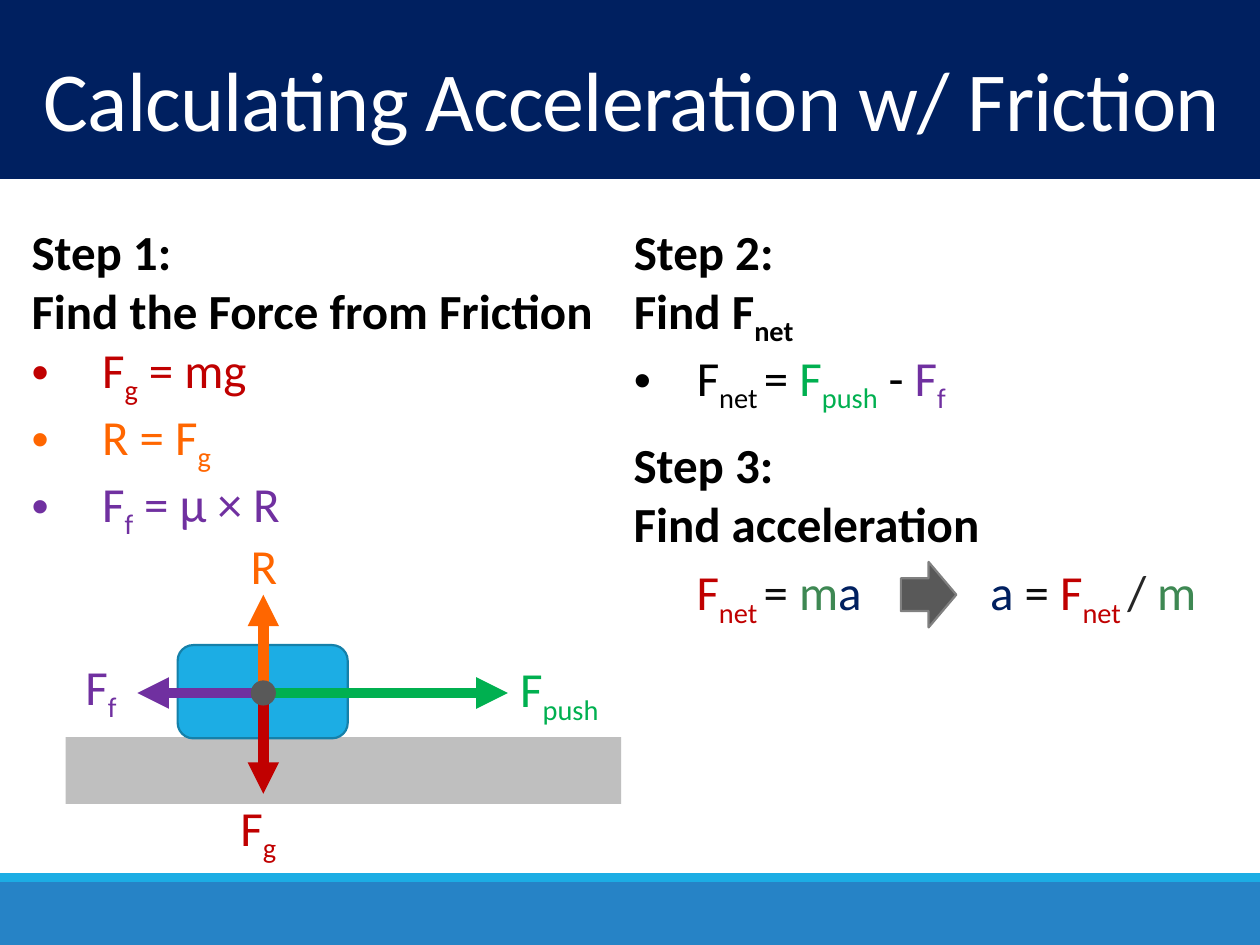
"""Build a slide on calculating acceleration with friction."""
from dataclasses import dataclass

from lxml.etree import SubElement
from pptx import Presentation
from pptx.dml.color import RGBColor
from pptx.enum.shapes import MSO_CONNECTOR as CONN, MSO_SHAPE as SHP
from pptx.enum.text import MSO_ANCHOR, MSO_AUTO_SIZE as FIT, PP_ALIGN
from pptx.oxml.ns import qn
from pptx.util import Inches, Pt


@dataclass(frozen=True)
class Theme:
    font: str = "Calibri"
    title: int = 48
    body: int = 28
    black: str = "000000"
    white: str = "FFFFFF"
    ink: str = "0D0D0D"
    slash: str = "262626"
    navy: str = "002060"
    red: str = "C00000"
    orange: str = "FF6600"
    purple: str = "7030A0"
    green: str = "00B050"
    mass: str = "3E8853"
    sky: str = "1CADE4"
    sky_edge: str = "1580A9"
    blue: str = "2683C6"
    floor: str = "BFBFBF"
    dark: str = "595959"
    grey: str = "808080"


T = Theme()
W, H = 10, 7.5
LEFT, RIGHT, COL_W, TOP = 0.15, 4.93, 4.89, 1.71
CX, CY = 2.09, 5.5


def force(sub, color):
    return [("F", color, False), (sub, color, True)]


def plain(text, color=T.black):
    return [(text, color, False)]


TITLE = "Calculating Acceleration w/ Friction"
STEP_1 = [
    ("head", plain("Step 1:")),
    ("head", plain("Find the Force from Friction")),
    ("item", force("g", T.red) + plain(" = mg", T.red)),
    ("item", plain("R = F", T.orange) + [("g", T.orange, True)]),
    ("item", force("f", T.purple) + plain(" = μ × R", T.purple)),
]
STEP_2 = [
    ("head", plain("Step 2:")),
    ("head", plain("Find F") + [("net", T.black, True)]),
    ("item", force("net ", T.black) + plain("= ") + force("push", T.green)
     + plain(" - ") + force("f", T.purple)),
]
STEP_3 = [("head", plain("Step 3:")), ("head", plain("Find acceleration"))]
LABELS = [
    (5.43, 4.41, 1.6, force("net ", T.red) + plain("= ", T.ink)
     + plain("m", T.mass) + plain("a", T.navy)),
    (7.76, 4.41, 1.89, plain("a ", T.navy) + plain("= ", T.ink)
     + force("net ", T.red) + plain("/ ", T.slash) + plain("m", T.mass)),
    (4.03, 5.18, 0.89, force("push", T.green)),
    (0.58, 5.16, 0.46, force("f", T.purple)),
    (1.81, 6.28, 0.51, force("g", T.red)),
    (1.89, 4.2, 0.41, plain("R", T.orange)),
]
BANDS = [
    (0, 7, W, 0.5, T.blue),
    (0, 6.93, W, 0.07, T.sky),
    (0, 0, W, 1.42, T.navy),
]
FORCES = [(1.94, 0, T.green), (-1, 0, T.purple), (0, 0.8, T.red), (0, -0.78, T.orange)]


def rgb(color):
    return RGBColor.from_string(color)


def place(s, x, y, w, h):
    s.left, s.top, s.width, s.height = map(Inches, (x, y, w, h))


def add_run(p, text, color, size=T.body, bold=False, sub=False):
    r = p.add_run()
    r.text = text
    f = r.font
    f.name, f.size, f.bold = T.font, Pt(size), bold
    f.color.rgb = rgb(color)
    if sub:
        r._r.get_or_add_rPr().set("baseline", "-25000")
    return r


def write(tf, paras, indent=0.5):
    for i, (kind, runs) in enumerate(paras):
        p = tf.paragraphs[0] if i == 0 else tf.add_paragraph()
        p.space_before = Pt(0)
        item = kind == "item"
        pPr = p._p.get_or_add_pPr()
        step = Inches(indent) if item else 0
        pPr.set("marL", str(step))
        pPr.set("indent", str(-step))
        if item:
            SubElement(pPr, qn("a:buFont")).set("typeface", "Arial")
            SubElement(pPr, qn("a:buChar")).set("char", "•")
        else:
            SubElement(pPr, qn("a:buNone"))
        for text, color, sub in runs:
            add_run(p, text, color, bold=kind == "head", sub=sub)


def add_shape(shapes, kind, x, y, w, h, fill, edge=None):
    s = shapes.add_shape(kind, *map(Inches, (x, y, w, h)))
    s.shadow.inherit = False
    s.fill.solid()
    s.fill.fore_color.rgb = rgb(fill)
    if edge:
        s.line.color.rgb, s.line.width = rgb(edge), Pt(1.25)
    else:
        s.line.fill.background()
    return s


def add_text(shapes, x, y, w, h, paras, wrap):
    tf = shapes.add_textbox(*map(Inches, (x, y, w, h))).text_frame
    tf.word_wrap, tf.auto_size = wrap, FIT.SHAPE_TO_FIT_TEXT
    write(tf, paras)


def add_force(shapes, dx, dy, color):
    ends = map(Inches, (CX, CY, CX + dx, CY + dy))
    c = shapes.add_connector(CONN.STRAIGHT, *ends)
    c.line.color.rgb, c.line.width = rgb(color), Pt(6)
    SubElement(c.line._get_or_add_ln(), qn("a:tailEnd")).set("type", "triangle")
    SubElement(c._element.spPr, qn("a:effectLst"))


def main():
    prs = Presentation()
    prs.slide_width, prs.slide_height = Inches(W), Inches(H)
    slide = prs.slides.add_slide(prs.slide_layouts[3])
    shapes = slide.shapes
    title, *bodies = slide.placeholders

    for *box, color in BANDS:
        band = add_shape(shapes, SHP.RECTANGLE, *box, color)
        title._element.addprevious(band._element)

    place(title, 0.03, 0.42, 9.97, 0.84)
    tf = title.text_frame
    tf.auto_size, tf.vertical_anchor = FIT.NONE, MSO_ANCHOR.MIDDLE
    p = tf.paragraphs[0]
    p.alignment, p.line_spacing = PP_ALIGN.CENTER, 0.85
    r = add_run(p, TITLE, T.white, T.title)
    r._r.get_or_add_rPr().set("spc", "-50")

    columns = [(LEFT, 2.46, STEP_1, 0.56), (RIGHT, 1.51, STEP_2, 0.5)]
    for body, (x, h, paras, indent) in zip(bodies, columns):
        place(body, x, TOP, COL_W, h)
        body.text_frame.auto_size = FIT.SHAPE_TO_FIT_TEXT
        write(body.text_frame, paras, indent)
    add_text(shapes, RIGHT, 3.4, COL_W, 1.04, STEP_3, True)

    add_shape(shapes, SHP.RIGHT_ARROW, 7.15, 4.46, 0.44, 0.52, T.dark, T.grey)
    add_shape(shapes, SHP.RECTANGLE, 0.52, 5.85, 4.41, 0.53, T.floor)
    add_shape(shapes, SHP.ROUNDED_RECTANGLE, 1.41, 5.12, 1.35, 0.74, T.sky, T.sky_edge)
    for f in FORCES:
        add_force(shapes, *f)
    for x, y, w, runs in LABELS:
        add_text(shapes, x, y, w, 0.57, [("label", runs)], False)
    add_shape(shapes, SHP.OVAL, CX - 0.1, CY - 0.1, 0.2, 0.2, T.dark)

    prs.save("out.pptx")


if __name__ == "__main__":
    main()
